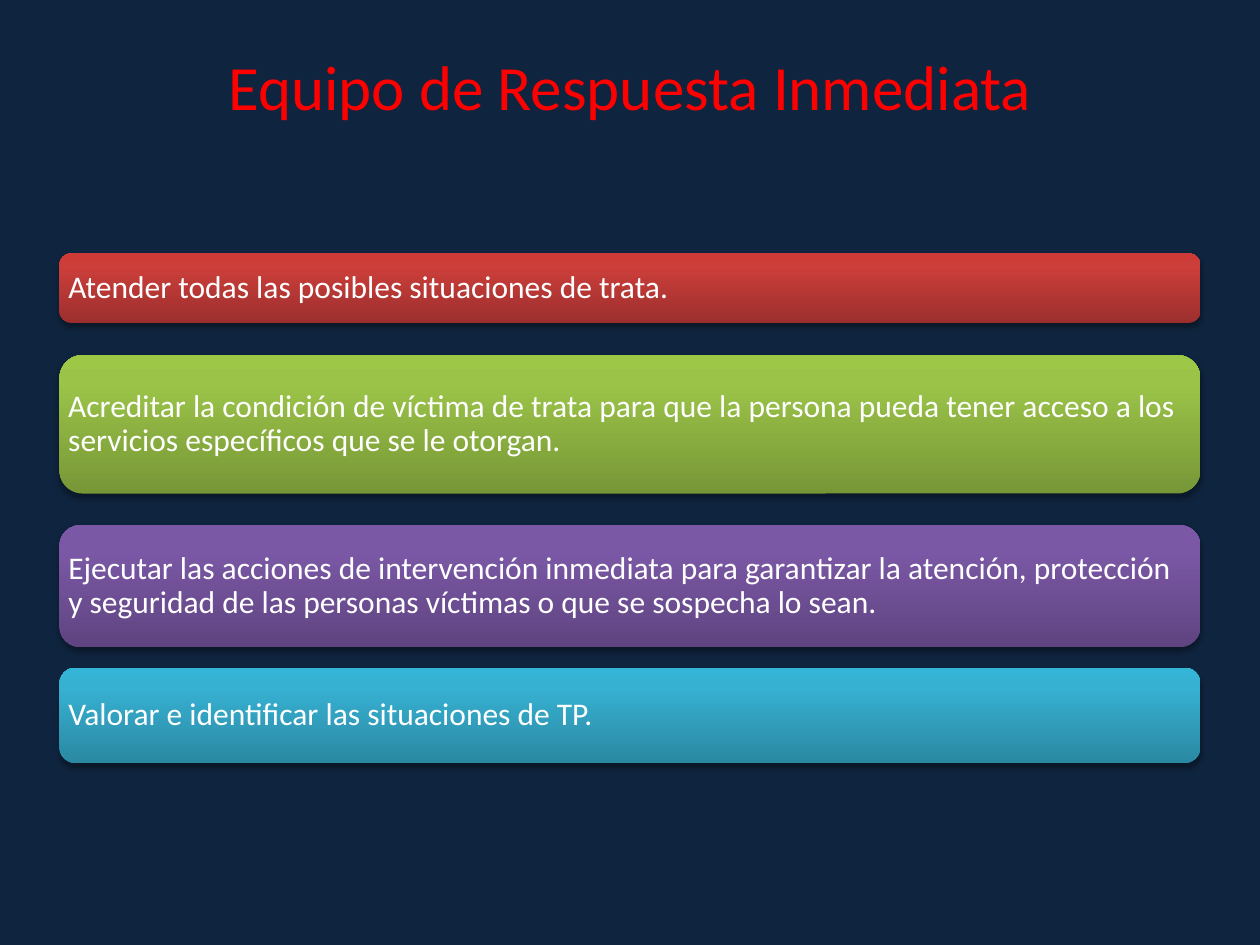
import pptx
import pptx.util
import pptx.dml.color
import pptx.enum.shapes
import pptx.enum.text
import lxml.etree
from pptx.util import Cm

COLORS = {
    "background": "0F243E",
    "title": "FF0000",
    "text": "FFFFFF",
    "shadow": "000000",
    "red": ("9C2F2D", "CB3E3A", "CE3B37"),
    "green": ("779737", "9BC348", "9DC746"),
    "purple": ("5F4480", "7B58A6", "7C57A8"),
    "cyan": ("2A88A2", "37B1D2", "34B4D6"),
}
TASKS = [
    ("red", 5.11, 1.4, "Atender todas las posibles situaciones de trata."),
    ("green", 7.16, 2.79, "Acreditar la condición de víctima de trata para que la persona "
     "pueda tener acceso a los servicios específicos que se le otorgan."),
    ("purple", 10.59, 2.46, "Ejecutar las acciones de intervención inmediata para garantizar "
     "la atención, protección y seguridad de las personas víctimas o que se sospecha lo sean."),
    ("cyan", 13.46, 1.93, "Valorar e identificar las situaciones de TP."),
]
NS = 'xmlns:a="http://schemas.openxmlformats.org/drawingml/2006/main"'
INSET = 0.18
CORNER_INSET = 0.05


def format_text(tf, size, color):
    p = tf.paragraphs[0]
    for r in p.runs:
        r.font.name = "Calibri"
        r.font.size = pptx.util.Pt(size)
        r.font.color.rgb = pptx.dml.color.RGBColor.from_string(COLORS[color])
    return p


def add_gradient_and_shadow(sp, colors):
    stops = "".join(
        f'<a:gs pos="{pos}"><a:srgbClr val="{color}"/></a:gs>'
        for pos, color in zip((0, 80000, 100000), colors)
    )
    gradient = pptx.oxml.parse_xml(
        f'<a:gradFill {NS} rotWithShape="1"><a:gsLst>{stops}</a:gsLst>'
        '<a:lin ang="16200000" scaled="0"/></a:gradFill>'
    )
    shadow = pptx.oxml.parse_xml(
        f'<a:outerShdw {NS} blurRad="40000" dist="23000" dir="5400000" rotWithShape="0">'
        f'<a:srgbClr val="{COLORS["shadow"]}"><a:alpha val="35000"/></a:srgbClr></a:outerShdw>'
    )
    sp.line.fill.background()
    sp.shadow.inherit = False
    props = sp._element.spPr
    props.find(pptx.oxml.ns.qn("a:prstGeom")).addnext(gradient)
    props.find(pptx.oxml.ns.qn("a:effectLst")).append(shadow)


prs = pptx.Presentation()
prs.slide_width, prs.slide_height = Cm(25.4), Cm(19.05)
slide = prs.slides.add_slide(prs.slide_layouts[0])
slide.background.fill.solid()
slide.background.fill.fore_color.rgb = pptx.dml.color.RGBColor.from_string(COLORS["background"])

subtitle = slide.placeholders[1]._element
subtitle.getparent().remove(subtitle)

title = slide.shapes.title
title.left, title.top, title.width, title.height = Cm(1.9), Cm(0.95), Cm(21.6), Cm(2.6)
tf = title.text_frame
tf.text = "Equipo de Respuesta Inmediata"
tf.vertical_anchor = pptx.enum.text.MSO_ANCHOR.TOP
tf.margin_top = 0
p = format_text(tf, 36, "title")
p.alignment = pptx.enum.text.PP_ALIGN.CENTER

for color, top, height, text in TASKS:
    sp = slide.shapes.add_shape(
        pptx.enum.shapes.MSO_SHAPE.ROUNDED_RECTANGLE, Cm(1.2), Cm(top), Cm(23), Cm(height)
    )
    add_gradient_and_shadow(sp, COLORS[color])
    tf = sp.text_frame
    tf.text = text
    tf.word_wrap = True
    tf.vertical_anchor = pptx.enum.text.MSO_ANCHOR.MIDDLE
    margin = Cm(INSET - CORNER_INSET * height)
    tf.margin_left = tf.margin_right = tf.margin_top = tf.margin_bottom = margin
    p = format_text(tf, 18, "text")
    p.alignment = pptx.enum.text.PP_ALIGN.LEFT
    p.line_spacing = 0.9

prs.save("out.pptx")
